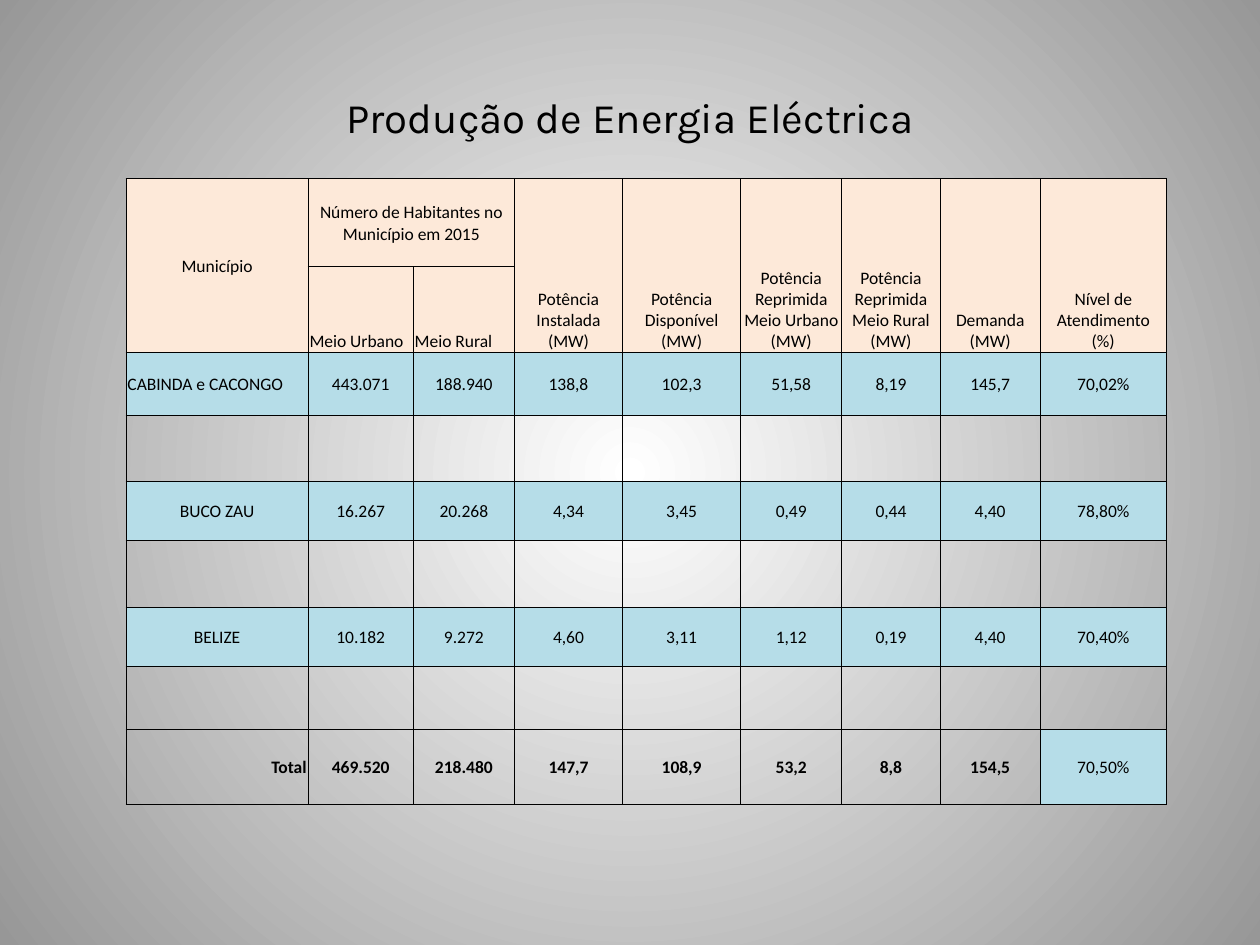
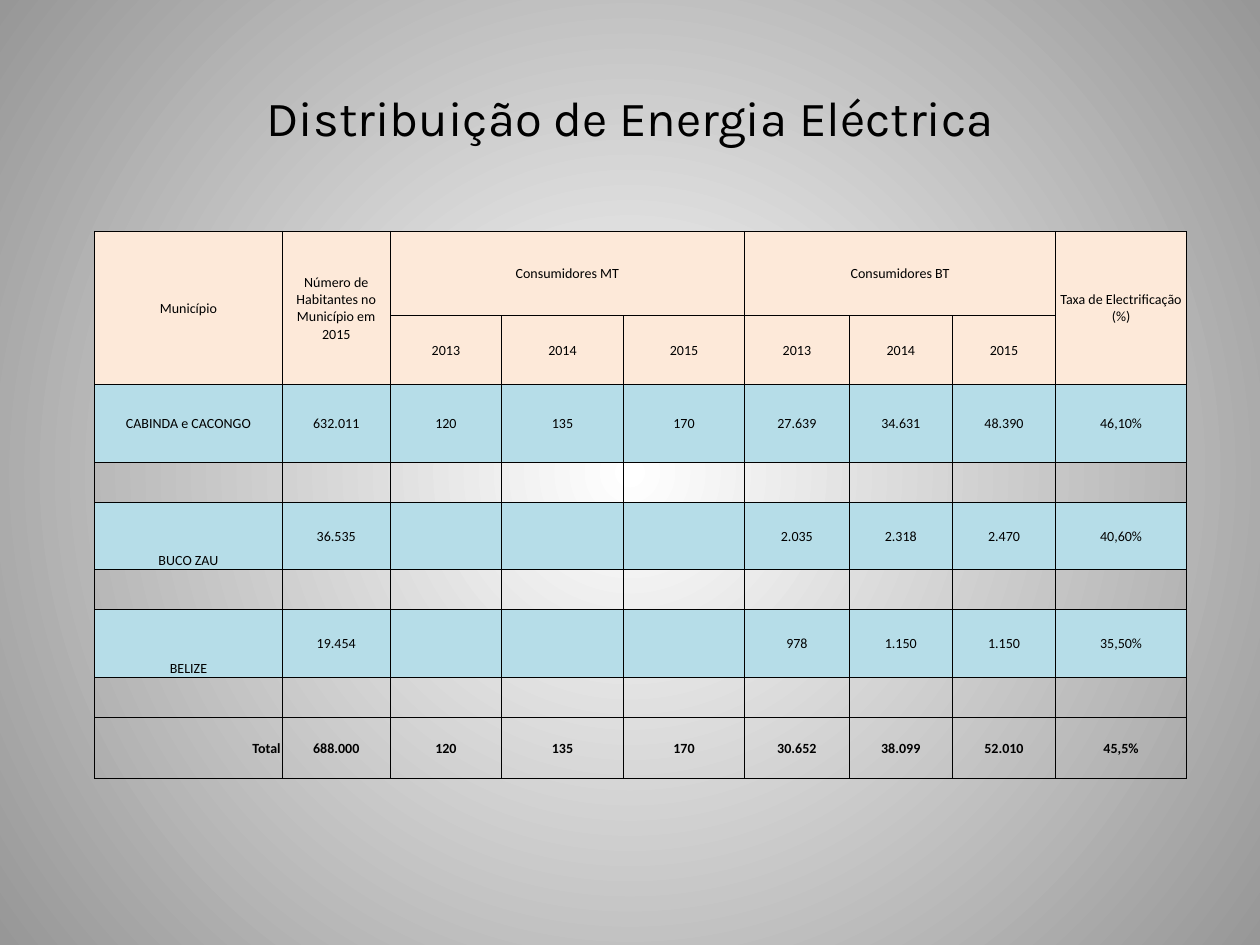
from dataclasses import dataclass

from lxml.etree import SubElement
from pptx import Presentation
from pptx.dml.color import RGBColor
from pptx.enum.text import MSO_VERTICAL_ANCHOR as Anchor, PP_PARAGRAPH_ALIGNMENT as Align
from pptx.oxml.ns import qn
from pptx.util import Cm, Pt


@dataclass(frozen=True)
class Theme:
    ink: str = "000000"
    center: str = "FFFFFF"
    edge: str = "979797"
    header: str = "FDE9D9"
    band: str = "B6DDE8"
    title_font: str = "Karla"
    table_font: str = "Calibri"
    production_title: int = 24
    distribution_title: int = 28
    production_table: int = 10
    distribution_table: int = 8
    border: float = 0.5


THEME = Theme()
HEADER_ROWS = 2
BLANK_ROW = [""] * 9


def write_text(frame, text, *, font, size, color, bold=False, align=Align.CENTER):
    frame.text = text
    for paragraph in frame.paragraphs:
        paragraph.alignment = align
        for run in paragraph.runs:
            run.font.name = font
            run.font.size = Pt(size)
            run.font.bold = bold
            run.font.color.rgb = RGBColor.from_string(color)


class Deck:
    def __init__(self, theme):
        self.theme = theme
        self.presentation = Presentation()
        self.presentation.slide_width = Cm(25.4)
        self.presentation.slide_height = Cm(19.05)
        self.slide = None
        self.set_background()

    def set_background(self):
        master = self.presentation.slide_master
        fill = master.background.fill
        fill.gradient()
        stops = zip(fill.gradient_stops, (0, 1), (self.theme.center, self.theme.edge))
        for stop, position, color in stops:
            stop.position = position
            stop.color.rgb = RGBColor.from_string(color)
        gradient = master.element.find(".//" + qn("a:gradFill"))
        gradient.remove(gradient.find(qn("a:lin")))
        circle = SubElement(gradient, qn("a:path"), {"path": "circle"})
        SubElement(circle, qn("a:fillToRect"), dict.fromkeys("ltrb", "50000"))

    def add_slide(self):
        self.slide = self.presentation.slides.add_slide(self.presentation.slide_layouts[6])

    def add_title(self, text, size):
        box = self.slide.shapes.add_textbox(Cm(1.27), Cm(0.76), Cm(22.86), Cm(3.18))
        box.text_frame.word_wrap = True
        box.text_frame.vertical_anchor = Anchor.MIDDLE
        write_text(box.text_frame, text, font=self.theme.title_font, size=size,
                   color=self.theme.ink)

    def style_cell(self, cell, fill, anchor):
        cell.margin_left = cell.margin_right = cell.margin_top = Cm(0.03)
        cell.margin_bottom = 0
        cell.vertical_anchor = anchor
        properties = cell._tc.get_or_add_tcPr()
        for side in ("lnL", "lnR", "lnT", "lnB"):
            line = SubElement(properties, qn(f"a:{side}"), w=str(Pt(self.theme.border)))
            solid = SubElement(line, qn("a:solidFill"))
            SubElement(solid, qn("a:srgbClr"), val=self.theme.ink)
        if fill:
            cell.fill.solid()
            cell.fill.fore_color.rgb = RGBColor.from_string(fill)
        else:
            cell.fill.background()

    def add_table(self, left, top, widths, heights, header, places, total, *,
                  size, spans, layout, filled_totals=()):
        rows = list(header)
        for place in places:
            rows += [place, BLANK_ROW]
        rows.append(total)
        last = len(rows) - 1
        frame = self.slide.shapes.add_table(
            len(rows), len(widths), Cm(left), Cm(top), Cm(sum(widths)), Cm(sum(heights)))
        table = frame.table
        table.first_row = table.horz_banding = False
        for column, width in zip(table.columns, widths):
            column.width = Cm(width)
        for row, height in zip(table.rows, heights):
            row.height = Cm(height)
        for (row, column), (down, across) in spans.items():
            table.cell(row, column).merge(table.cell(row + down - 1, column + across - 1))
        for r, texts in enumerate(rows):
            for c, text in enumerate(texts):
                if r < HEADER_ROWS:
                    fill = self.theme.header
                elif (r < last and r % 2 == 0) or (r == last and c in filled_totals):
                    fill = self.theme.band
                else:
                    fill = None
                align, anchor = layout.get((r, c), (Align.CENTER, Anchor.MIDDLE))
                cell = table.cell(r, c)
                self.style_cell(cell, fill, anchor)
                if text:
                    write_text(cell.text_frame, text, font=self.theme.table_font, size=size,
                               color=self.theme.ink, bold=r == last and not fill, align=align)


def build_production(deck):
    deck.add_slide()
    deck.add_title("Produção de Energia Eléctrica", deck.theme.production_title)
    header = [
        ["Município", "Número de Habitantes no Município em 2015", "",
         "Potência Instalada (MW)", "Potência Disponível (MW)",
         "Potência Reprimida Meio Urbano (MW)", "Potência Reprimida Meio Rural (MW)",
         "Demanda (MW)", "Nível de Atendimento\n(%)"],
        ["", "Meio Urbano", "Meio Rural"] + [""] * 6,
    ]
    places = [
        ["CABINDA e CACONGO", "443.071", "188.940", "138,8", "102,3", "51,58", "8,19",
         "145,7", "70,02%"],
        ["BUCO ZAU", "16.267", "20.268", "4,34", "3,45", "0,49", "0,44", "4,40", "78,80%"],
        ["BELIZE", "10.182", "9.272", "4,60", "3,11", "1,12", "0,19", "4,40", "70,40%"],
    ]
    total = ["Total", "469.520", "218.480", "147,7", "108,9", "53,2", "8,8", "154,5", "70,50%"]
    power_columns = range(3, 9)
    spans = {(0, 0): (2, 1), (0, 1): (1, 2)}
    spans.update({(0, c): (2, 1) for c in power_columns})
    layout = {(0, c): (Align.CENTER, Anchor.BOTTOM) for c in power_columns}
    layout.update({(1, c): (Align.LEFT, Anchor.BOTTOM) for c in (1, 2)})
    layout[2, 0] = (Align.LEFT, Anchor.MIDDLE)
    layout[8, 0] = (Align.RIGHT, Anchor.MIDDLE)
    deck.add_table(
        2.54, 3.6,
        [3.67, 2.12, 2.04, 2.18, 2.38, 2.04, 1.98, 2.02, 2.54],
        [1.78, 1.42, 1.27, 1.32, 1.19, 1.35, 1.19, 1.27, 1.52],
        header, places, total, size=deck.theme.production_table,
        spans=spans, layout=layout, filled_totals=(8,))


def build_distribution(deck):
    deck.add_slide()
    deck.add_title("Distribuição de Energia Eléctrica", deck.theme.distribution_title)
    years = ["2013", "2014", "2015"]
    header = [
        ["Município", "Número de Habitantes no Município em 2015", "Consumidores MT", "", "",
         "Consumidores BT", "", "", "Taxa de Electrificação\n(%)"],
        ["", "", *years, *years, ""],
    ]
    places = [
        ["CABINDA e CACONGO", "632.011", "120", "135", "170", "27.639", "34.631", "48.390",
         "46,10%"],
        ["BUCO ZAU", "36.535", "", "", "", "2.035", "2.318", "2.470", "40,60%"],
        ["BELIZE", "19.454", "", "", "", "978", "1.150", "1.150", "35,50%"],
    ]
    total = ["Total", "688.000", "120", "135", "170", "30.652", "38.099", "52.010", "45,5%"]
    spans = {(0, c): (2, 1) for c in (0, 1, 8)}
    spans.update({(0, c): (1, 3) for c in (2, 5)})
    layout = {(r, 0): (Align.CENTER, Anchor.BOTTOM) for r in (4, 6)}
    layout[8, 0] = (Align.RIGHT, Anchor.MIDDLE)
    deck.add_table(
        1.91, 4.66,
        [3.78, 2.18, 2.24, 2.46, 2.44, 2.11, 2.08, 2.08, 2.64],
        [1.7, 1.37, 1.57, 0.81, 1.35, 0.81, 1.37, 0.81, 1.22],
        header, places, total, size=deck.theme.distribution_table,
        spans=spans, layout=layout)


def main():
    deck = Deck(THEME)
    build_production(deck)
    build_distribution(deck)
    deck.presentation.save("out.pptx")


if __name__ == "__main__":
    main()
